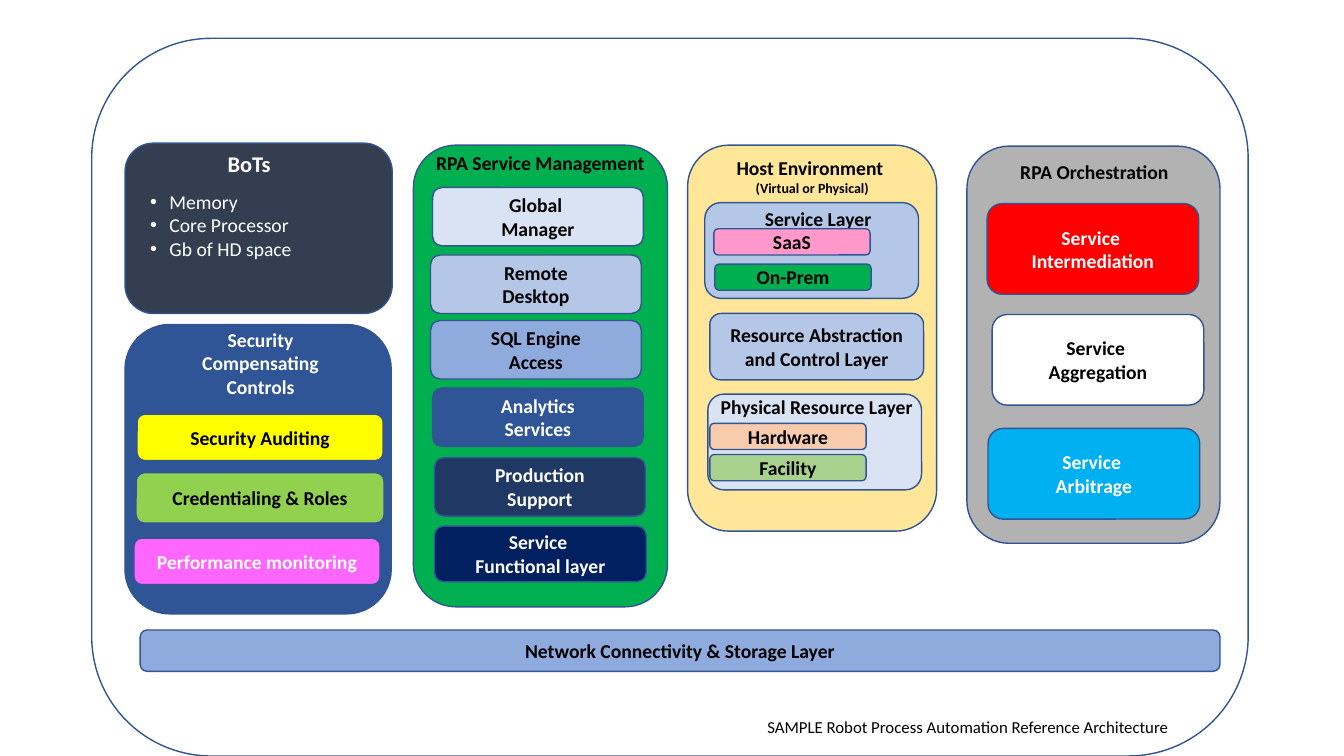
import pptx
import pptx.util
import pptx.dml.color
import pptx.enum.shapes
import pptx.enum.text
import pptx.oxml.ns
import lxml.etree

Inches, Pt = pptx.util.Inches, pptx.util.Pt
ALIGN, ANCHOR = pptx.enum.text.PP_ALIGN, pptx.enum.text.MSO_ANCHOR
BLACK, WHITE = "000000", "FFFFFF"


def color(value):
    return pptx.dml.color.RGBColor.from_string(value)


def apply(target, values):
    for name, value in values.items():
        setattr(target, name, value)


class Diagram:
    """Holds the shared style and the current slide."""
    font, border, size = "Calibri", "325491", 14

    def __init__(self, prs):
        self.s = prs.slides.add_slide(prs.slide_layouts[1])

    def add_lines(self, tf, lines, ink=BLACK, sizes=None, bold=True, align=ALIGN.CENTER):
        for i, line in enumerate(lines):
            p = tf.paragraphs[0] if i == 0 else tf.add_paragraph()
            apply(p, {"alignment": align, "space_before": Pt(0), "line_spacing": 1.0})
            r = p.add_run()
            r.text = line
            size = sizes[i] if sizes else self.size
            apply(r.font, {"name": self.font, "size": Pt(size), "bold": bold})
            r.font.color.rgb = color(ink)

    def box(self, left, top, width, height, fill=None, lines=(), ink=BLACK):
        """Rounded box, with centred text if lines are given."""
        sp = self.s.shapes.add_shape(
            pptx.enum.shapes.MSO_SHAPE.ROUNDED_RECTANGLE,
            Inches(left), Inches(top), Inches(width), Inches(height))
        sp.shadow.inherit = False
        if fill:
            sp.fill.solid()
            sp.fill.fore_color.rgb = color(fill)
        else:
            sp.fill.background()
        sp.line.color.rgb = color(self.border)
        sp.line.width = Pt(1)
        apply(sp.text_frame, {"vertical_anchor": ANCHOR.MIDDLE, "word_wrap": True})
        self.add_lines(sp.text_frame, lines, ink)

    def label(self, left, top, width, height, lines, wrap=False, **style):
        sp = self.s.shapes.add_textbox(
            Inches(left), Inches(top), Inches(width), Inches(height))
        sp.text_frame.word_wrap = wrap
        self.add_lines(sp.text_frame, lines, **style)

    def placeholder(self, sp, left, top, width, height, lines, **style):
        """Moves a placeholder to the front, then places and fills it."""
        self.s.shapes.element.append(sp.element)
        apply(sp, {"left": Inches(left), "top": Inches(top),
                   "width": Inches(width), "height": Inches(height)})
        apply(sp.text_frame, {"word_wrap": False, "vertical_anchor": ANCHOR.TOP,
                              "auto_size": pptx.enum.text.MSO_AUTO_SIZE.NONE})
        self.add_lines(sp.text_frame, lines, bold=False, align=ALIGN.LEFT, **style)

    def bullets(self, sp, indent):
        qn = pptx.oxml.ns.qn
        for p in sp.text_frame.paragraphs:
            pPr = p._p.get_or_add_pPr()
            pPr.set("marL", str(Inches(indent)))
            pPr.set("indent", str(-Inches(indent)))
            lxml.etree.SubElement(pPr, qn("a:buFont")).set("typeface", "Arial")
            lxml.etree.SubElement(pPr, qn("a:buChar")).set("char", "•")


def bots(d):
    d.box(1.24, 1.42, 2.65, 1.69, "333F50")
    d.label(1.01, 1.44, 2.92, 0.75, ["BoTs"], wrap=True, ink=WHITE, sizes=[16])
    body = d.s.placeholders[1]
    d.placeholder(body, 1.39, 1.83, 1.71, 0.95,
                  ["Memory", "Core Processor", "Gb of HD space"], ink=WHITE)
    d.bullets(body, 0.19)


def security(d):
    d.box(1.24, 3.22, 2.64, 2.87, "2F5597")
    d.label(1.9, 3.2, 1.37, 0.81, ["Security", "Compensating", "Controls"], ink=WHITE)
    for left, top, width, height, fill, text, ink in (
            (1.36, 4.11, 2.44, 0.46, "FFFF00", "Security Auditing", BLACK),
            (1.35, 4.69, 2.46, 0.5, "92D050", "Credentialing & Roles", BLACK),
            (1.33, 5.34, 2.44, 0.46, "FF66FF", "Performance monitoring", WHITE)):
        d.box(left, top, width, height, fill, [text], ink)


def service_management(d):
    d.box(4.1, 1.44, 2.52, 4.58, "00B050")
    d.label(4.22, 1.45, 2.28, 0.34, ["RPA Service Management"])
    for left, top, fill, lines, ink in (
            (4.29, 1.86, "DAE3F3", ["Global ", "Manager"], BLACK),
            (4.27, 2.53, "B4C7E7", ["Remote", "Desktop"], BLACK),
            (4.27, 3.18, "8FAADC", ["SQL Engine", "Access"], BLACK),
            (4.29, 3.85, "2F5597", ["Analytics", "Services"], WHITE),
            (4.31, 4.54, "203864", ["Production", "Support"], WHITE)):
        d.box(left, top, 2.09, 0.58, fill, lines, ink)
    d.box(4.31, 5.22, 2.1, 0.55, "002060", ["Service ", "Functional layer"], WHITE)


def host_environment(d):
    d.box(6.82, 1.44, 2.47, 3.83, "FFE699")
    d.label(6.53, 1.5, 3.05, 0.67, ["Host Environment ", "(Virtual or Physical)"],
            wrap=True, sizes=[14, 10])
    d.box(6.99, 2.01, 2.12, 0.95, "B4C7E7")
    d.label(7.48, 2, 1.27, 0.34, ["Service Layer"])
    d.box(7.04, 3.11, 2.12, 0.66, "B4C7E7", ["Resource Abstraction and Control Layer"])
    d.box(7.02, 3.91, 2.12, 0.95, "DAE3F3")
    d.label(7.04, 3.87, 2.12, 0.34, ["Physical Resource Layer"])
    for left, top, fill, text in ((7.08, 2.27, "FF99CC", "SaaS"),
                                  (7.09, 2.62, "00B050", "On-Prem"),
                                  (7.04, 4.2, "F8CBAD", "Hardware"),
                                  (7.04, 4.51, "A9D18E", "Facility")):
        d.box(left, top, 1.55, 0.26, fill, [text])


def orchestration(d):
    d.box(9.59, 1.45, 2.51, 3.94, "B2B2B2")
    d.label(9.99, 1.54, 1.73, 0.34, ["RPA Orchestration"])
    for left, top, fill, text, ink in (
            (9.79, 2.02, "FF0000", "Intermediation", WHITE),
            (9.84, 3.12, "FFFFFF", "Aggregation", BLACK),
            (9.8, 4.25, "00B0F0", "Arbitrage", WHITE)):
        d.box(left, top, 2.1, 0.9, fill, ["Service ", text], ink)


def main():
    prs = pptx.Presentation()
    apply(prs, {"slide_width": Inches(13.33), "slide_height": Inches(7.5)})
    d = Diagram(prs)
    d.box(0.91, 0.38, 11.47, 7.12)
    d.box(1.39, 6.25, 10.71, 0.41, "8FAADC", ["Network Connectivity & Storage Layer"])
    for column in (security, bots, host_environment, service_management, orchestration):
        column(d)
    d.placeholder(d.s.shapes.title, 7.51, 7.06, 4.23, 0.3,
                  ["SAMPLE Robot Process Automation Reference Architecture"], sizes=[12])
    prs.save("out.pptx")


if __name__ == "__main__":
    main()
